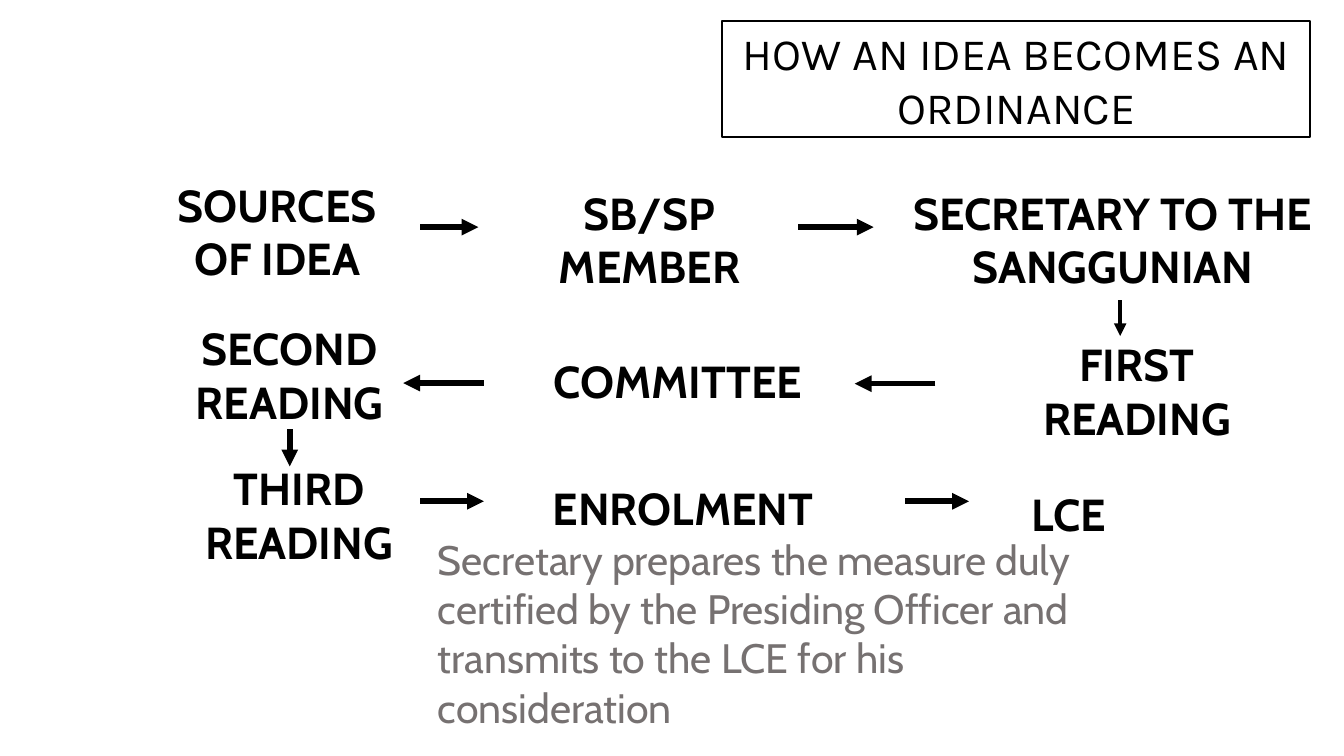
from dataclasses import dataclass

from lxml import etree
from pptx import Presentation
from pptx import util as u
from pptx.dml.color import RGBColor
from pptx.enum import shapes, text
from pptx.oxml.ns import qn


@dataclass(frozen=True)
class Theme:
    ink: RGBColor = RGBColor(0, 0, 0)
    paper: RGBColor = RGBColor(255, 255, 255)
    gray: RGBColor = RGBColor(0x76, 0x71, 0x71)
    head: str = "Karla"
    body: str = "Cabin"
    big: int = 48
    small: int = 44


THEME = Theme()

STEPS = [
    ("SOURCES OF IDEA", 162, 185, 270, 121.7),
    ("SB/SP MEMBER", 552, 193.7, 288, 121.7),
    ("SECRETARY TO THE SANGGUNIAN", 944.6, 193.7, 495.4, 121.7),
    ("FIRST READING", 1074.2, 355.7, 288, 121.7),
    ("COMMITTEE", 545.8, 373.7, 361.4, 109.4),
    ("SECOND READING", 153, 338.4, 315, 121.7),
    ("THIRD READING", 154.1, 488.9, 332.6, 121.7),
    ("ENROLMENT", 527.8, 510.5, 408.2, 98.6),
    ("LCE", 1066.3, 516.2, 157.7, 44.6),
]

ARROWS = [
    (450, 243.4, 512.6, 243.4, 6),
    (855.4, 243.4, 936, 243.4, 6),
    (1200.2, 321.8, 1200.2, 360, 4.5),
    (1002.2, 411.1, 915.8, 411.1, 6),
    (518.4, 410.4, 432, 410.4, 6),
    (450, 537.1, 518.4, 537.1, 6),
    (969.8, 537.1, 1038.2, 537.1, 6),
]


def style(para, name, size, color, bold=False):
    font = para.font
    font.name, font.size, font.bold = name, u.Pt(size), bold
    font.color.rgb = color


def add_title(slide, words):
    title = slide.shapes.title
    title.left, title.top = u.Pt(774), u.Pt(23)
    title.width, title.height = u.Pt(630), u.Pt(123.8)
    title.fill.solid()
    title.fill.fore_color.rgb = THEME.paper
    title.line.color.rgb = THEME.ink
    title.line.width = u.Pt(2.25)
    frame = title.text_frame
    frame.text = words
    frame.auto_size = text.MSO_AUTO_SIZE.SHAPE_TO_FIT_TEXT
    para = frame.paragraphs[0]
    para.alignment = text.PP_ALIGN.CENTER
    style(para, THEME.head, THEME.big, THEME.ink)


def add_text(slide, words, left, top, width, height):
    box = slide.shapes.add_textbox(*map(u.Pt, (left, top, width, height)))
    box.text_frame.word_wrap = True
    box.text_frame.text = words
    return box


def add_step(slide, words, *place):
    box = add_text(slide, words, *place)
    frame = box.text_frame
    frame.margin_left = frame.margin_right = u.Pt(5 if words == "THIRD READING" else 10.8)
    frame.margin_top = frame.margin_bottom = u.Pt(5)
    para = frame.paragraphs[0]
    para.alignment = text.PP_ALIGN.CENTER
    style(para, THEME.body, THEME.big, THEME.ink, True)
    return box


def add_note(slide, words, *place):
    frame = add_text(slide, words, *place).text_frame
    frame.auto_size = text.MSO_AUTO_SIZE.SHAPE_TO_FIT_TEXT
    style(frame.paragraphs[0], THEME.body, THEME.small, THEME.gray)


def add_arrow(slide, x1, y1, x2, y2, weight):
    arrow = slide.shapes.add_connector(
        shapes.MSO_CONNECTOR.STRAIGHT, *map(u.Pt, (x1, y1, x2, y2)))
    arrow.line.color.rgb = THEME.ink
    arrow.line.width = u.Pt(weight)
    etree.SubElement(arrow.line._get_or_add_ln(), qn("a:tailEnd"), type="triangle")
    etree.SubElement(arrow._element.spPr, qn("a:effectLst"))
    return arrow


def main():
    deck = Presentation()
    deck.slide_width, deck.slide_height = u.Pt(1440), u.Pt(810)
    slide = deck.slides.add_slide(deck.slide_layouts[5])
    add_title(slide, "HOW AN IDEA BECOMES AN ORDINANCE")
    boxes = {step[0]: add_step(slide, *step) for step in STEPS}
    for arrow in ARROWS:
        add_arrow(slide, *arrow)
    down = add_arrow(slide, 310.5, 460.1, 310.5, 499.7, 6)
    down.begin_connect(boxes["SECOND READING"], 2)
    add_note(slide, "Secretary prepares the measure duly certified by the Presiding "
             "Officer and transmits to the LCE for his consideration",
             462.2, 568.8, 702, 220.3)
    deck.save("out.pptx")


if __name__ == "__main__":
    main()
